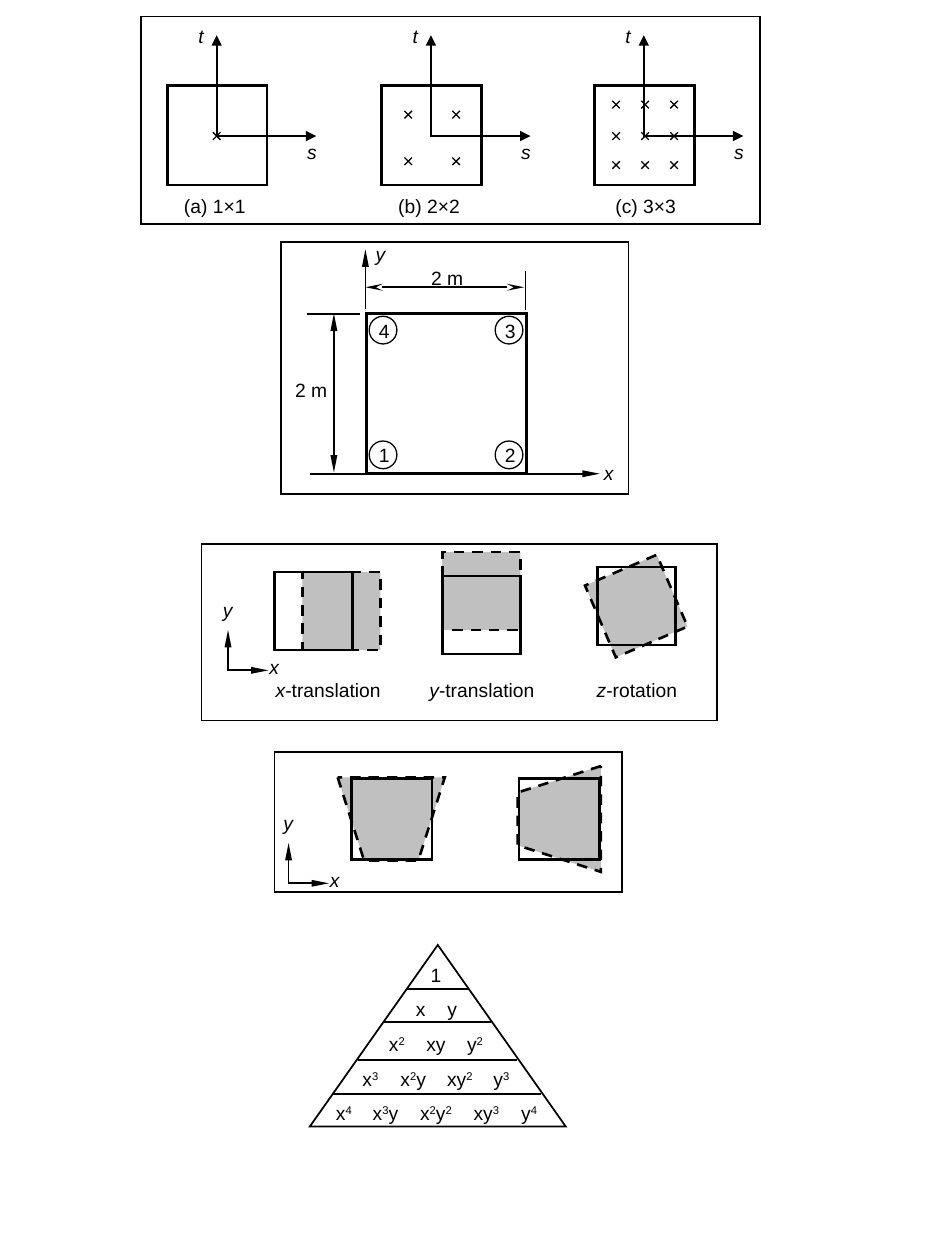
import itertools

import pptx
import pptx.dml.color
import pptx.enum.dml
import pptx.enum.shapes
import pptx.enum.text
import pptx.oxml
import pptx.oxml.ns
import pptx.util

PX = 9144  # EMU per px, 100 px to the inch
THEME = {
    "ink": pptx.dml.color.RGBColor(0x00, 0x00, 0x00),
    "paper": pptx.dml.color.RGBColor(0xFF, 0xFF, 0xFF),
    "moved": pptx.dml.color.RGBColor(0xC0, 0xC0, 0xC0),
    "font": "Arial",
    "size": pptx.util.Pt(11),
    "hair": 0.75,
    "thin": 1,
    "thick": 1.5,
}
RECT = pptx.enum.shapes.MSO_SHAPE.RECTANGLE
OVAL = pptx.enum.shapes.MSO_SHAPE.OVAL
STRAIGHT = pptx.enum.shapes.MSO_CONNECTOR.STRAIGHT
SLIM = {"w": "sm", "len": "lg"}
EVEN = {"w": "med", "len": "med"}

prs = pptx.Presentation()
prs.slide_width, prs.slide_height = 750 * PX, 1000 * PX
slide = prs.slides.add_slide(prs.slide_layouts[6])
shapes = slide.shapes


def draw(kind, points, weight, fill=None, dashed=False, ends=(), arrow="triangle", head=SLIM):
    """Add an outlined element: a preset at (x, y, w, h), or a "line", "path" or "polygon" through points."""
    if kind == "line":
        (x1, y1), (x2, y2) = points
        shape = shapes.add_connector(STRAIGHT, x1 * PX, y1 * PX, x2 * PX, y2 * PX)
    elif kind in ("path", "polygon"):
        builder = shapes.build_freeform(*points[0], scale=PX)
        builder.add_line_segments(points[1:], close=kind == "polygon")
        shape = builder.convert_to_shape()
    else:
        shape = shapes.add_shape(kind, *(v * PX for v in points))
    shape.line.color.rgb = THEME["ink"]
    shape.line.width = pptx.util.Pt(weight)
    if dashed:
        shape.line.dash_style = pptx.enum.dml.MSO_LINE.DASH
    outline = shape.line._get_or_add_ln()
    outline.append(pptx.oxml.parse_xml(f'<a:miter {pptx.oxml.ns.nsdecls("a")} lim="800000"/>'))
    for end in ends:
        tip = pptx.oxml.parse_xml(f'<a:{end} {pptx.oxml.ns.nsdecls("a")} type="{arrow}"/>')
        for key, value in head.items():
            tip.set(key, value)
        outline.append(tip)
    if kind == "line":
        shape._element.spPr.append(pptx.oxml.parse_xml(f'<a:effectLst {pptx.oxml.ns.nsdecls("a")}/>'))
        return shape
    shape.shadow.inherit = False
    if fill is None:
        shape.fill.background()
    else:
        shape.fill.solid()
        shape.fill.fore_color.rgb = fill
    return shape


def label(x, y, w, h, symbol="", rest="", inset=(0, 0)):
    """Add a centred text with an italic symbol followed by upright text."""
    box = shapes.add_textbox(x * PX, y * PX, w * PX, h * PX)
    frame = box.text_frame
    frame.word_wrap = True
    frame.margin_left = frame.margin_right = inset[0] * PX
    frame.margin_top = frame.margin_bottom = inset[1] * PX
    paragraph = frame.paragraphs[0]
    paragraph.alignment = pptx.enum.text.PP_ALIGN.CENTER
    for part, italic in ((symbol, True), (rest, False)):
        if part:
            run = paragraph.add_run()
            run.text = part
            run.font.name, run.font.size = THEME["font"], THEME["size"]
            run.font.color.rgb, run.font.italic = THEME["ink"], italic


BOTH = ("headEnd", "tailEnd")
INSET = (10, 5)

# Panel 1: integration points in natural coordinates
rules = [
    (133, "(a) 1×1", 138, [39], [108]),
    (303, "(b) 2×2", 308, [21, 59], [91, 128]),
    (472, "(c) 3×3", 480, [17, 40, 63], [83, 108, 131]),
]
for left, caption, caption_left, columns, rows in rules:
    draw(RECT, (left, 68, 79, 79), THEME["thick"])
    origin = left + 39
    draw("path", [(origin, 28), (origin, 108), (origin + 79, 108)], THEME["thin"], ends=BOTH, head=EVEN)
    label(left + 107, 111, 15, 26, "s")
    label(left + 19, 19, 15, 26, "t")
    for column, y in itertools.product(columns, rows):
        x = left + column
        for rise in (3, -3):
            draw("line", [(x - 3, y + rise), (x + 3, y - rise)], THEME["hair"])
    label(caption_left, 154, 65, 21, rest=caption)
draw(RECT, (112, 13, 491, 165), THEME["thin"])

# Panel 2: square element with numbered nodes and dimensions
draw(RECT, (291, 249, 127, 127), THEME["thick"], fill=THEME["paper"])
for node, x, y in (("1", 293, 350), ("2", 393, 350), ("3", 393, 251), ("4", 293, 251)):
    label(x + 1, y + 2, 22, 22, rest=node)
    draw(OVAL, (x, y, 22, 22), THEME["hair"])
for axis_line in ([(246, 376), (476, 376)], [(290, 245), (290, 198)]):
    draw("line", axis_line, THEME["thin"], ends=("tailEnd",))
for extension_line in ([(286, 249), (244, 249)], [(417, 246), (417, 215)]):
    draw("line", extension_line, THEME["thin"])
draw("line", [(290, 228), (416, 228)], THEME["thin"], ends=BOTH, arrow="stealth")
draw("line", [(265, 249), (265, 375)], THEME["thin"], ends=BOTH)
label(472, 366, 22, 22, "x")
label(291, 192, 22, 22, "y")
for x, y in ((337, 211), (229, 300)):
    label(x, y, 36, 22, rest="2 m")
draw(RECT, (223, 192, 276, 200), THEME["thin"])

# Panel 3: rigid body modes, moved square behind the one at rest
modes = [
    ("x", "-translation", 203, (240, 454), (218, 454), 0),
    ("y", "-translation", 325, (351, 438), (351, 457), 0),
    ("z", "-rotation", 448, (474, 450), (474, 450), 336.8),
]
for symbol, motion, caption_left, moved, rest, angle in modes:
    draw(RECT, (*moved, 62, 62), THEME["thick"], fill=THEME["moved"], dashed=True).rotation = angle
    draw(RECT, (*rest, 62, 62), THEME["thick"])
    label(caption_left, 533, 115, 32, symbol, motion, INSET)
draw(RECT, (160, 432, 409, 140), THEME["thin"])

# Panel 4: hourglass modes
hourglasses = [
    (279, [(268, 617), (289, 683), (332, 683), (353, 617)]),
    (412, [(477, 608), (411, 629), (411, 671), (477, 692)]),
]
for left, corners in hourglasses:
    draw("polygon", corners, THEME["thick"], fill=THEME["moved"], dashed=True)
    draw(RECT, (left, 618, 64, 64), THEME["thick"])
draw(RECT, (218, 597, 276, 111), THEME["thin"])

# Small x-y axes of panels 3 and 4
for x, y in ((181, 532), (229, 701)):
    draw("path", [(x, y - 32), (x, y), (x + 32, y)], THEME["thin"], ends=BOTH)
    label(x + 23, y - 17, 26, 32, "x", inset=INSET)
    label(x - 14, y - 62, 26, 32, "y", inset=INSET)

# Pascal triangle: terms of each degree, centred on tab stops
PYRAMID_LEFT = 255
degrees = [
    (["1"], [346]),
    (["x", "y"], [334, 359]),
    (["x2", "xy", "y2"], [315, 346, 377]),
    (["x3", "x2y", "xy2", "y3"], [294, 328, 365, 398]),
    (["x4", "x3y", "x2y2", "xy3", "y4"], [273, 306, 346, 386, 420]),
]
terms_box = shapes.add_textbox(PYRAMID_LEFT * PX, 750 * PX, 184 * PX, 149 * PX)
terms_frame = terms_box.text_frame
terms_frame.word_wrap = True
terms_frame.margin_left = terms_frame.margin_right = 0
for degree, (terms, centres) in enumerate(degrees):
    paragraph = terms_frame.paragraphs[0] if degree == 0 else terms_frame.add_paragraph()
    paragraph.line_spacing = 1.5
    stops = "".join(f'<a:tab pos="{(c - PYRAMID_LEFT) * PX}" algn="ctr"/>' for c in centres)
    paragraph._p.get_or_add_pPr().append(
        pptx.oxml.parse_xml(f'<a:tabLst {pptx.oxml.ns.nsdecls("a")}>{stops}</a:tabLst>'))
    line = "".join("\t" + term for term in terms)
    for is_digit, characters in itertools.groupby(line, str.isdigit):
        run = paragraph.add_run()
        run.text = "".join(characters)
        run.font.name, run.font.size = THEME["font"], THEME["size"]
        run.font.color.rgb = THEME["ink"]
        if is_digit and degree > 0:
            run._r.get_or_add_rPr().set("baseline", "30000")
draw(pptx.enum.shapes.MSO_SHAPE.ISOSCELES_TRIANGLE, (246, 750, 203, 144), THEME["thin"])
for start, end, y in ((323, 372, 785), (304, 390, 811), (284, 410, 841), (264, 429, 868)):
    draw("line", [(start, y), (end, y)], THEME["thin"])

prs.save("out.pptx")
